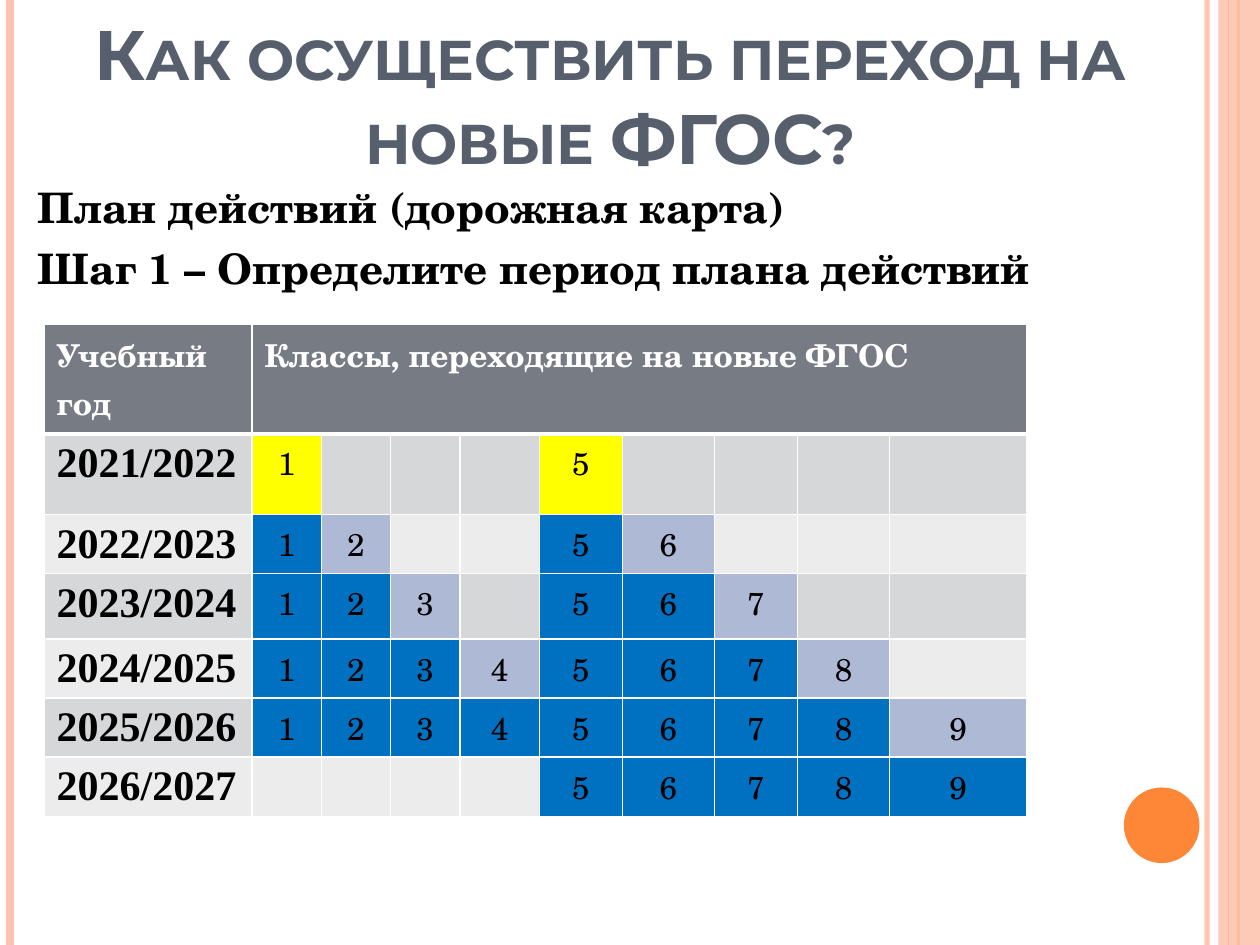
from dataclasses import dataclass

from lxml import etree
from pptx import Presentation
from pptx import util as u
from pptx.dml.color import RGBColor
from pptx.enum import shapes, text
from pptx.oxml import ns

COLORS = {
    "title": "575F6D", "text": "000000", "white": "FFFFFF",
    "orange": "FE8637", "peach": "FEC3AE", "header": "777C84",
    "odd": "D6D7D9", "even": "ECECED",
    "pilot": "FFFF00", "joining": "AEBAD5", "joined": "0070C0",
}
SERIF, HEADING, YEARS = "TeX Gyre Schola", "Montserrat", "Times New Roman"
COLUMNS = [1.65, 0.55, 0.55, 0.55, 0.63, 0.66, 0.73, 0.66, 0.73, 1.09]
ROWS = [0.41, 0.64, 0.41, 0.52, 0.41, 0.41, 0.41]
FIRST_YEAR = 2021
PRIMARY, SECONDARY = range(1, 5), range(5, 10)


@dataclass
class Stripe:
    x: float
    width: float
    color: str
    opacity: int = 100


STRIPES = [
    Stripe(9.58, 3, "peach", 93),
    Stripe(0.08, 4.5, "peach"),
    Stripe(9.83, 1.5, "orange"),
    Stripe(9.75, 0.75, "orange"),
]


def rgb(name: str) -> RGBColor:
    return RGBColor.from_string(COLORS[name])


def set_opacity(element, percent: int) -> None:
    color = element.find(".//" + ns.qn("a:srgbClr"))
    etree.SubElement(color, ns.qn("a:alpha"), val=str(percent * 1000))


def add_stripe(page, stripe: Stripe) -> None:
    x = u.Inches(stripe.x)
    line = page.shapes.add_connector(
        shapes.MSO_CONNECTOR.STRAIGHT, x, 0, x, u.Inches(7.5))
    line.line.width = u.Pt(stripe.width)
    line.line.color.rgb = rgb(stripe.color)
    properties = line._element.spPr
    if stripe.opacity < 100:
        set_opacity(properties, stripe.opacity)
    etree.SubElement(properties, ns.qn("a:effectLst"))


def add_plain_shape(page, kind, box: tuple, color: str):
    shape = page.shapes.add_shape(kind, *map(u.Inches, box))
    shape.shadow.inherit = False
    shape.fill.solid()
    shape.fill.fore_color.rgb = rgb(color)
    shape.line.fill.background()
    return shape


def place(box, left: float, top: float, width: float, height: float) -> None:
    box.left, box.top = u.Inches(left), u.Inches(top)
    box.width, box.height = u.Inches(width), u.Inches(height)
    box.text_frame.auto_size = text.MSO_AUTO_SIZE.NONE
    box.text_frame.word_wrap = True


def style(para, name: str, size: float, color: str, bold: bool = True) -> None:
    para.font.name = name
    para.font.size = u.Pt(size)
    para.font.bold = bold
    para.font.color.rgb = rgb(color)


def set_borders(cell, bottom: float = 1) -> None:
    properties = cell._tc.get_or_add_tcPr()
    for side in "LRTB":
        width = u.Pt(bottom if side == "B" else 1)
        line = etree.SubElement(properties, ns.qn(f"a:ln{side}"), w=str(width))
        fill = etree.SubElement(line, ns.qn("a:solidFill"))
        etree.SubElement(fill, ns.qn("a:srgbClr"), val=COLORS["white"])


def paint(cell, color: str, bottom: float = 1) -> None:
    set_borders(cell, bottom)
    cell.fill.solid()
    cell.fill.fore_color.rgb = rgb(color)


def write(cell, words: str, name: str, size: float, color: str, bold: bool):
    cell.text = words
    para = cell.text_frame.paragraphs[0]
    style(para, name, size, color, bold)
    return para


def class_status(step: int, grade: int) -> str:
    """Colour of a grade in a year; empty when it is not shown."""
    stage = PRIMARY if grade in PRIMARY else SECONDARY
    newest = stage[0] + step
    if grade > newest or newest > stage[-1] + 1:
        return ""
    if grade == newest:
        return "joining" if step else "pilot"
    return "joined"


def add_schedule(page) -> None:
    frame = page.shapes.add_table(
        len(ROWS), len(COLUMNS), u.Inches(0.35), u.Inches(2.57),
        u.Inches(sum(COLUMNS)), u.Inches(sum(ROWS)))
    table = frame.table
    table.first_row = table.horz_banding = False
    for column, width in zip(table.columns, COLUMNS):
        column.width = u.Inches(width)
    for row, height in zip(table.rows, ROWS):
        row.height = u.Inches(height)

    # Header row
    table.cell(0, 1).merge(table.cell(0, len(COLUMNS) - 1))
    for index in range(len(COLUMNS)):
        paint(table.cell(0, index), "header", bottom=3)
    for index, words in enumerate(
            ["Учебный год", "Классы, переходящие на новые ФГОС"]):
        write(table.cell(0, index), words, SERIF, 18, "white", True)

    # One row a school year, one column a grade
    for step in range(len(ROWS) - 1):
        band = "even" if step % 2 else "odd"
        year = FIRST_YEAR + step
        label = table.cell(step + 1, 0)
        paint(label, band)
        write(label, f"{year}/{year + 1}", YEARS, 24, "text", True)
        for grade in range(1, len(COLUMNS)):
            cell = table.cell(step + 1, grade)
            status = class_status(step, grade)
            paint(cell, status or band)
            para = write(cell, str(grade) if status else "",
                         SERIF, 18, "text", False)
            para.alignment = text.PP_ALIGN.CENTER


def main() -> None:
    deck = Presentation()
    deck.slide_width, deck.slide_height = u.Inches(10), u.Inches(7.5)
    page = deck.slides.add_slide(deck.slide_layouts[1])

    # Side decoration
    for stripe in STRIPES:
        add_stripe(page, stripe)
    band = add_plain_shape(page, shapes.MSO_SHAPE.RECTANGLE,
                           (9.67, 0, 0.33, 7.5), "peach")
    set_opacity(band._element.spPr, 87)
    add_plain_shape(page, shapes.MSO_SHAPE.OVAL, (8.92, 6.25, 0.6, 0.6), "orange")

    # Title
    title = page.shapes.title
    place(title, 0.28, 0.13, 9.13, 1.34)
    title.text_frame.vertical_anchor = text.MSO_ANCHOR.BOTTOM
    title.text_frame.text = "Как осуществить переход на новые ФГОС?"
    para = title.text_frame.paragraphs[0]
    para.alignment = text.PP_ALIGN.CENTER
    style(para, HEADING, 40, "title")
    para.runs[0]._r.get_or_add_rPr().set("cap", "small")

    # Plan steps
    body = page.placeholders[1]
    place(body, 0.2, 1.39, 9.37, 5.98)
    body.text_frame.text = ("План действий (дорожная карта)\n"
                            "Шаг 1 – Определите период плана действий")
    for para in body.text_frame.paragraphs:
        style(para, SERIF, 24, "text")
        para.space_before = u.Pt(6)
        properties = para._p.get_or_add_pPr()
        properties.set("marL", "0")
        properties.set("indent", "0")
        properties.insert_element_before(
            etree.Element(ns.qn("a:buNone")), "a:tabLst", "a:defRPr", "a:extLst")

    add_schedule(page)
    deck.save("out.pptx")


if __name__ == "__main__":
    main()
